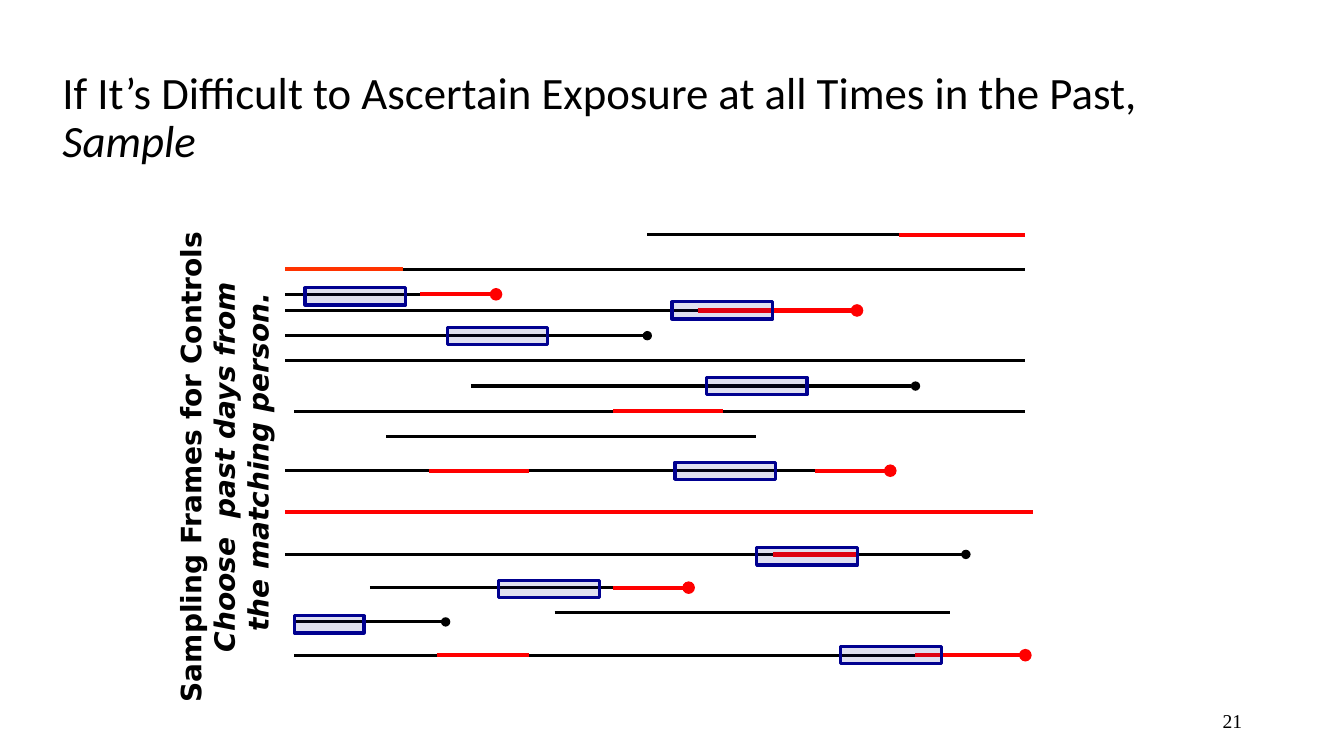
from pptx import Presentation
from pptx.dml.color import RGBColor
from pptx.enum.shapes import MSO_CONNECTOR, MSO_SHAPE
from pptx.enum.text import MSO_ANCHOR as ANCHOR, PP_ALIGN as ALIGN
from pptx.oxml.ns import qn
from pptx.util import Inches, Pt
from lxml.etree import SubElement

COLORS = {"unexposed": "000000", "exposed": "FF0000", "early": "FF3300",
          "window": "000090", "text": "000000"}
WIDTHS = {"unexposed": 2.25, "exposed": 3, "early": 3, "window": 2.25}

# Each person: height on the slide, then (start, end, state, has event)
U, E = "unexposed", "exposed"
PEOPLE = [
    (2.33, [(6.42, 8.92, U, False), (8.92, 10.17, E, False)]),
    (2.67, [(2.83, 4, "early", False), (4, 10.17, U, False)]),
    (2.92, [(2.83, 4.17, U, False), (4.17, 4.92, E, True)]),
    (3.08, [(2.83, 6.92, U, False), (6.92, 8.5, E, True)]),
    (3.33, [(2.83, 6.42, U, True)]),
    (3.58, [(2.83, 10.17, U, False)]),
    (3.83, [(4.67, 9.08, U, True)]),
    (4.08, [(2.92, 6.17, U, False), (7.17, 10.17, U, False),
            (6.08, 7.17, E, False)]),
    (4.33, [(3.83, 7.5, U, False)]),
    (4.67, [(2.83, 4.25, U, False), (5.17, 8.08, U, False),
            (4.25, 5.25, E, False), (8.08, 8.83, E, True)]),
    (5.08, [(2.83, 10.25, E, False)]),
    (5.5, [(2.83, 7.75, U, False), (8.5, 9.58, U, True),
           (7.67, 8.5, E, False)]),
    (5.83, [(3.67, 6.08, U, False), (6.08, 6.83, E, True)]),
    (6.08, [(5.5, 9.42, U, False)]),
    (6.17, [(2.92, 4.42, U, True)]),
    (6.5, [(2.92, 4.33, U, False), (4.33, 5.25, E, False),
           (5.25, 9.08, U, False), (9.08, 10.17, E, True)]),
]
# Sampling windows: left, top, length
WINDOWS = [(3.44, 2.44, 1), (7.08, 2.58, 1), (4.85, 2.83, 1),
           (7.42, 3.33, 1), (7.11, 4.17, 1), (7.92, 5.02, 1),
           (3.18, 5.85, 0.69), (5.36, 5.34, 1), (8.75, 6, 1)]


class SlideBuilder:
    def __init__(self, slide):
        self.shapes = slide.shapes

    def timeline(self, y, start, end, state, event):
        s = self.shapes.add_connector(MSO_CONNECTOR.STRAIGHT, Inches(start),
                                      Inches(y), Inches(end), Inches(y))
        s.line.color.rgb = RGBColor.from_string(COLORS[state])
        s.line.width = Pt(WIDTHS[state])
        if event:
            SubElement(s.line._get_or_add_ln(), qn("a:tailEnd"), type="oval")
        SubElement(s._element.spPr, qn("a:effectLst"))

    def window(self, left, top, length):
        """Translucent bar, stood upright and turned to lie on its timeline."""
        s = self.shapes.add_shape(MSO_SHAPE.RECTANGLE, Inches(left),
                                  Inches(top), Inches(0.17), Inches(length))
        s.rotation = 270
        s.shadow.inherit = False
        color = RGBColor.from_string(COLORS["window"])
        s.fill.solid()
        s.fill.fore_color.rgb = color
        clr = s._element.spPr.find(qn("a:solidFill")).find(qn("a:srgbClr"))
        SubElement(clr, qn("a:alpha"), val="13000")
        s.line.color.rgb = color
        s.line.width = Pt(WIDTHS["window"])

    def text(self, box, paragraphs, font, frame, para, rotation=0):
        """Each paragraph is a list of (text, italic) runs."""
        s = self.shapes.add_textbox(*map(Inches, box))
        s.rotation = rotation
        tf = s.text_frame
        self.apply(tf, frame)
        for i, runs in enumerate(paragraphs):
            p = tf.add_paragraph() if i else tf.paragraphs[0]
            self.apply(p, para)
            for text, italic in runs:
                r = p.add_run()
                r.text = text
                self.apply(r.font, {**font, "italic": italic})
                r.font.color.rgb = RGBColor.from_string(COLORS["text"])

    @staticmethod
    def apply(target, values):
        for name, value in values.items():
            setattr(target, name, value)


def main():
    prs = Presentation()
    prs.slide_width, prs.slide_height = Inches(13.33), Inches(7.5)
    b = SlideBuilder(prs.slides.add_slide(prs.slide_layouts[6]))
    middle = {"word_wrap": True, "vertical_anchor": ANCHOR.MIDDLE}

    b.text((0.52, 0.39, 12.21, 1.58),
           [[("If It’s Difficult to Ascertain Exposure at all Times "
              "in the Past, ", False), ("Sample", True)]],
           {"name": "Calibri", "size": Pt(32)}, middle,
           {"line_spacing": 0.9})
    for y, segments in PEOPLE:
        for segment in segments:
            b.timeline(y, *segment)
    for window in WINDOWS:
        b.window(*window)
    b.text((-0.22, 4.08, 4.89, 1.11),
           [[("Sampling Frames for Controls", False)],
            [("Choose  past days from", True)],
            [(" the matching person.", True)]],
           {"name": "DejaVu Sans", "size": Pt(20), "bold": True},
           {"word_wrap": False}, {"alignment": ALIGN.CENTER}, rotation=270)
    b.text((9.42, 6.95, 3, 0.4), [[("21", False)]],
           {"name": "Times New Roman", "size": Pt(14)}, middle,
           {"alignment": ALIGN.RIGHT})
    prs.save("out.pptx")


if __name__ == "__main__":
    main()
